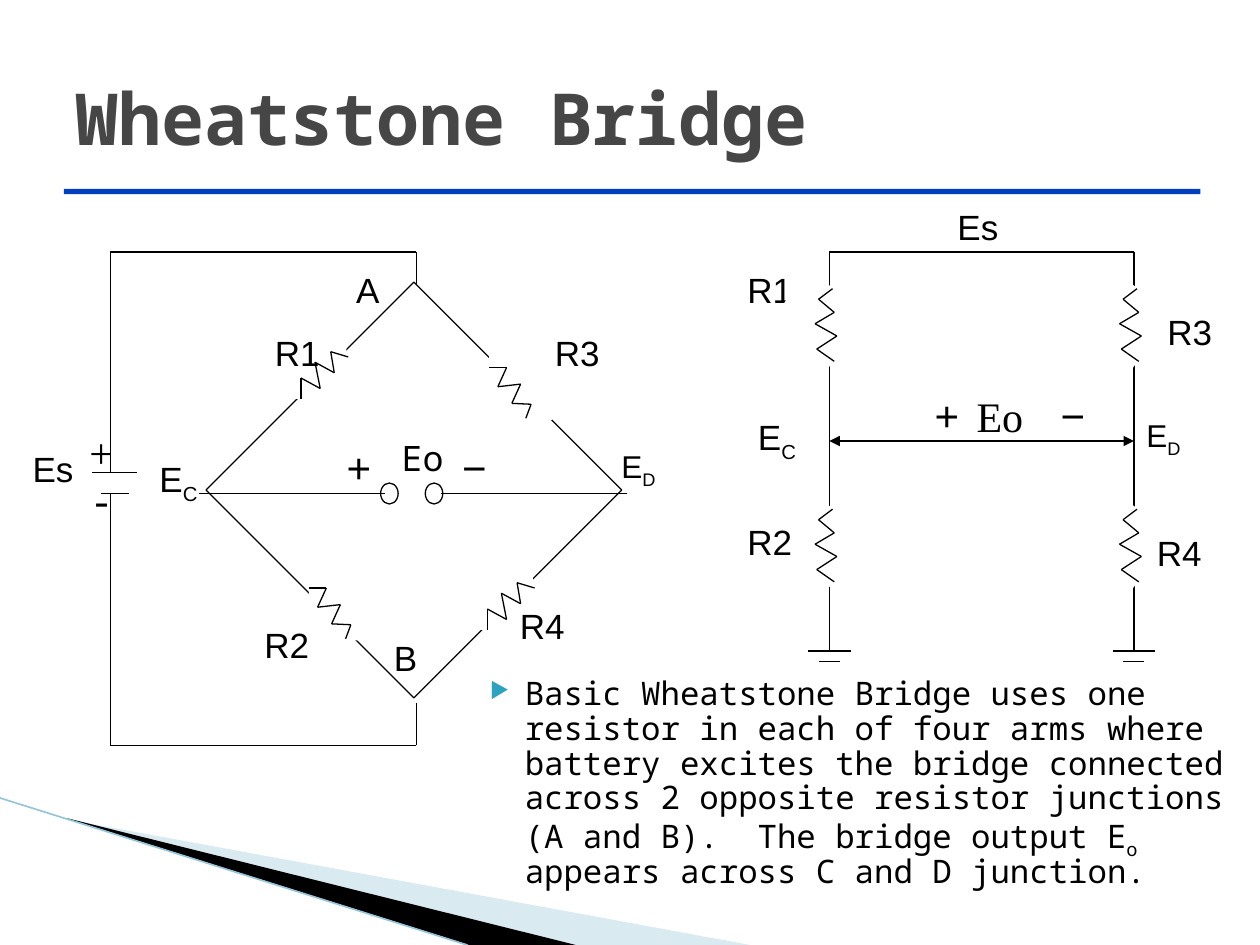
import dataclasses
import itertools
import typing

import lxml.etree
import pptx
import pptx.dml.color
import pptx.enum.shapes
import pptx.enum.text
import pptx.oxml.ns
import pptx.util

Pt = pptx.util.Pt
Kind = pptx.enum.shapes.MSO_SHAPE
Point = tuple[float, float]
BLACK = "000000"
WHITE = "FFFFFF"
MONO = "Noto Sans Mono"
SERIF = "Times New Roman"


@dataclasses.dataclass
class Label:
    text: str
    left: float
    top: float
    width: float
    sub: str = ""
    size: float = 20
    font: str = "Arial"
    wrap: bool = False


@dataclasses.dataclass
class Zigzag:
    width: float
    height: float
    turn: float
    points: list[Point]


RISE = Zigzag(36, 42, 0, [(10, 42), (10, 30), (21, 36), (18, 21), (29, 27), (27, 15), (37, 18)])
FALL = Zigzag(42, 36, 90, [(3, 9), (13, 9), (8, 20), (21, 18.5), (16, 29.5), (27, 30), (24, 38)])
DOWN = Zigzag(48, 42, 305, [(36, 41.5), (26, 34.5), (37.5, 27), (25, 20), (36, 13.5), (27, 6), (35, 0)])

LEFT = [
    Label("Es", 11.5, 252, 38),
    Label("R1", 420, 150, 40),
    Label("R2", 144, 353, 40),
    Label("R4", 290, 342, 40),
    Label("R3", 310, 186, 40),
    Label("E", 84, 258, 37.5, "C"),
    Label("E", 348, 252, 60.5, "D", 18, wrap=True),
    Label("+", 44, 240, 28, size=24, font=SERIF),
    Label("-", 47, 267, 22, size=24, font=SERIF),
    Label("A", 196.5, 150, 28),
    Label("B", 218, 360, 28),
    Label("Eo", 222.5, 246, 39, font=MONO),
]
RIGHT = [
    Label("Eo", 551, 219.5, 41, size=24, font=SERIF),
    Label("R1", 150, 186, 40),
    Label("R3", 660, 174, 40),
    Label("R2", 420, 294, 40),
    Label("R4", 654, 300, 40),
    Label("E", 426, 234, 37.5, "C"),
    Label("E", 648, 234, 60.5, "D", 18, wrap=True),
    Label("Es", 540, 114, 38),
    Label("+", 191, 248.5, 27.5, size=24),
    Label("−", 257, 248.5, 27.5, size=24),
    Label("+", 527, 219, 27.5, size=24),
    Label("−", 599, 219, 27.5, size=24),
]


def paint(target: typing.Any, color: str) -> None:
    target.solid()
    target.fore_color.rgb = pptx.dml.color.RGBColor.from_string(color)


def add_node(parent: typing.Any, tag: str, **values: str) -> typing.Any:
    return lxml.etree.SubElement(parent, pptx.oxml.ns.qn(tag), values)


def draw_line(slide: typing.Any, start: Point, end: Point, color: str = BLACK,
              width: float = 0.75, arrows: bool = False) -> None:
    ends = [Pt(value) for value in (*start, *end)]
    line = slide.shapes.add_connector(pptx.enum.shapes.MSO_CONNECTOR.STRAIGHT, *ends)
    line.line.width = Pt(width)
    paint(line.line.fill, color)
    props = line._element.spPr
    if arrows:
        stroke = props.find(pptx.oxml.ns.qn("a:ln"))
        add_node(stroke, "a:headEnd", type="triangle")
        add_node(stroke, "a:tailEnd", type="triangle")
    add_node(props, "a:effectLst")


def draw_chain(slide: typing.Any, points: list[Point]) -> None:
    for start, end in itertools.pairwise(points):
        draw_line(slide, start, end)


def draw_shape(slide: typing.Any, kind: typing.Any, left: float, top: float, width: float,
               height: float, fill: str = "", turn: float = 0) -> None:
    shape = slide.shapes.add_shape(kind, Pt(left), Pt(top), Pt(width), Pt(height))
    shape.shadow.inherit = False
    shape.rotation = turn
    if fill:
        paint(shape.fill, fill)
        shape.line.fill.background()
    else:
        shape.fill.background()
        shape.line.width = Pt(0.75)
        paint(shape.line.fill, BLACK)


def draw_wedge(slide: typing.Any, points: list[Point], color: str, alpha: int = 100) -> None:
    spots = [(Pt(x), Pt(y)) for x, y in points]
    maker = slide.shapes.build_freeform(*spots[0], scale=1.0)
    maker.add_line_segments(spots[1:], close=True)
    wedge = maker.convert_to_shape()
    wedge.shadow.inherit = False
    paint(wedge.fill, color)
    wedge.line.fill.background()
    if alpha < 100:
        tone = wedge._element.spPr.find(".//" + pptx.oxml.ns.qn("a:srgbClr"))
        add_node(tone, "a:alpha", val=str(alpha * 1000))


def draw_coil(slide: typing.Any, coil: Zigzag, left: float, top: float) -> None:
    draw_shape(slide, Kind.RECTANGLE, left, top, coil.width, coil.height, WHITE, coil.turn)
    draw_chain(slide, [(left + x, top + y) for x, y in coil.points])


def add_run(para: typing.Any, text: str, size: float, font: str, color: str = BLACK,
            low: bool = False, bold: bool = False) -> None:
    run = para.add_run()
    run.text = text
    run.font.size = Pt(size)
    run.font.name = font
    run.font.bold = bold
    paint(run.font.fill, color)
    if low:
        run._r.get_or_add_rPr().set("baseline", "-25000")


def draw_label(slide: typing.Any, label: Label) -> None:
    box = slide.shapes.add_textbox(Pt(label.left), Pt(label.top), Pt(label.width), Pt(label.size * 1.2 + 7))
    frame = box.text_frame
    frame.word_wrap = label.wrap
    frame.auto_size = pptx.enum.text.MSO_AUTO_SIZE.SHAPE_TO_FIT_TEXT
    para = frame.paragraphs[0]
    add_run(para, label.text, label.size, label.font)
    if label.sub:
        add_run(para, label.sub, label.size, label.font, low=True)


def draw_title(slide: typing.Any) -> None:
    title = slide.shapes.title
    title.left, title.top, title.width, title.height = Pt(36), Pt(21.6), Pt(648), Pt(90)
    title.text_frame.vertical_anchor = pptx.enum.text.MSO_ANCHOR.MIDDLE
    para = title.text_frame.paragraphs[0]
    para.alignment = pptx.enum.text.PP_ALIGN.LEFT
    add_run(para, "Wheatstone Bridge", 41, MONO, "464646", bold=True)


def draw_body(slide: typing.Any) -> None:
    box = slide.shapes.add_textbox(Pt(264), Pt(384), Pt(456), Pt(126))
    box.text_frame.word_wrap = True
    para = box.text_frame.paragraphs[0]
    para.line_spacing = 0.89
    props = para._p.get_or_add_pPr()
    props.set("marL", str(Pt(28.8)))
    props.set("indent", str(Pt(-20)))
    tint = add_node(props, "a:buClr")
    add_node(tint, "a:srgbClr", val="2DA2BF")
    add_node(props, "a:buSzPct", val="68000")
    add_node(props, "a:buChar", char="▶")
    add_run(para, "Basic Wheatstone Bridge uses one resistor in each of four arms where battery "
            "excites the bridge connected across 2 opposite resistor junctions (A and B).  "
            "The bridge output E", 18.5, MONO)
    add_run(para, "o", 18.5, MONO, low=True)
    add_run(para, " appears across C and D junction.", 18.5, MONO)


def draw_bridge(slide: typing.Any) -> None:
    draw_shape(slide, Kind.RECTANGLE, 152.5, 196, 168, 168, turn=45)
    draw_coil(slide, RISE, 162, 186)
    draw_coil(slide, RISE, 268.5, 318)
    draw_coil(slide, FALL, 276.5, 201)
    draw_coil(slide, FALL, 173.5, 327)
    draw_chain(slide, [(238, 162), (238, 144), (63, 144), (63, 270)])
    draw_chain(slide, [(63, 282), (63, 426), (238, 426), (238, 402)])
    for left, right, level in [(52.5, 78.5, 270), (57.5, 73.5, 282), (114, 220, 282), (252, 358.5, 282)]:
        draw_line(slide, (left, level), (right, level))
    for left in (217.5, 243):
        draw_shape(slide, Kind.OVAL, left, 276, 10, 12)


def draw_arms(slide: typing.Any) -> None:
    draw_line(slide, (474, 144), (648, 144))
    for mid in (474, 648):
        draw_line(slide, (mid, 144), (mid, 372))
        for top in (165, 291):
            draw_coil(slide, DOWN, mid - 33.25, top)
        for half, level in [(12, 372), (6, 378)]:
            draw_line(slide, (mid - half, level), (mid + half, level))
    draw_line(slide, (474, 252), (648, 252), arrows=True)


def main() -> None:
    deck = pptx.Presentation()
    deck.slide_width, deck.slide_height = Pt(720), Pt(540)
    slide = deck.slides.add_slide(deck.slide_layouts.get_by_name("Title Only"))
    draw_wedge(slide, [(39.5, 468.5), (428.5, 540), (328.5, 540), (39.5, 468)], "A0CBDC", 40)
    draw_wedge(slide, [(38, 467.5), (329, 540), (268, 540), (39, 468)], BLACK)
    draw_line(slide, (0, 456), (267, 540), "97C5D8", 0.95)
    draw_title(slide)
    draw_body(slide)
    draw_bridge(slide)
    for label in LEFT:
        draw_label(slide, label)
    draw_arms(slide)
    for label in RIGHT:
        draw_label(slide, label)
    draw_shape(slide, Kind.RECTANGLE, 36.5, 108, 649.5, 3, "0040C0")
    deck.save("out.pptx")


if __name__ == "__main__":
    main()
